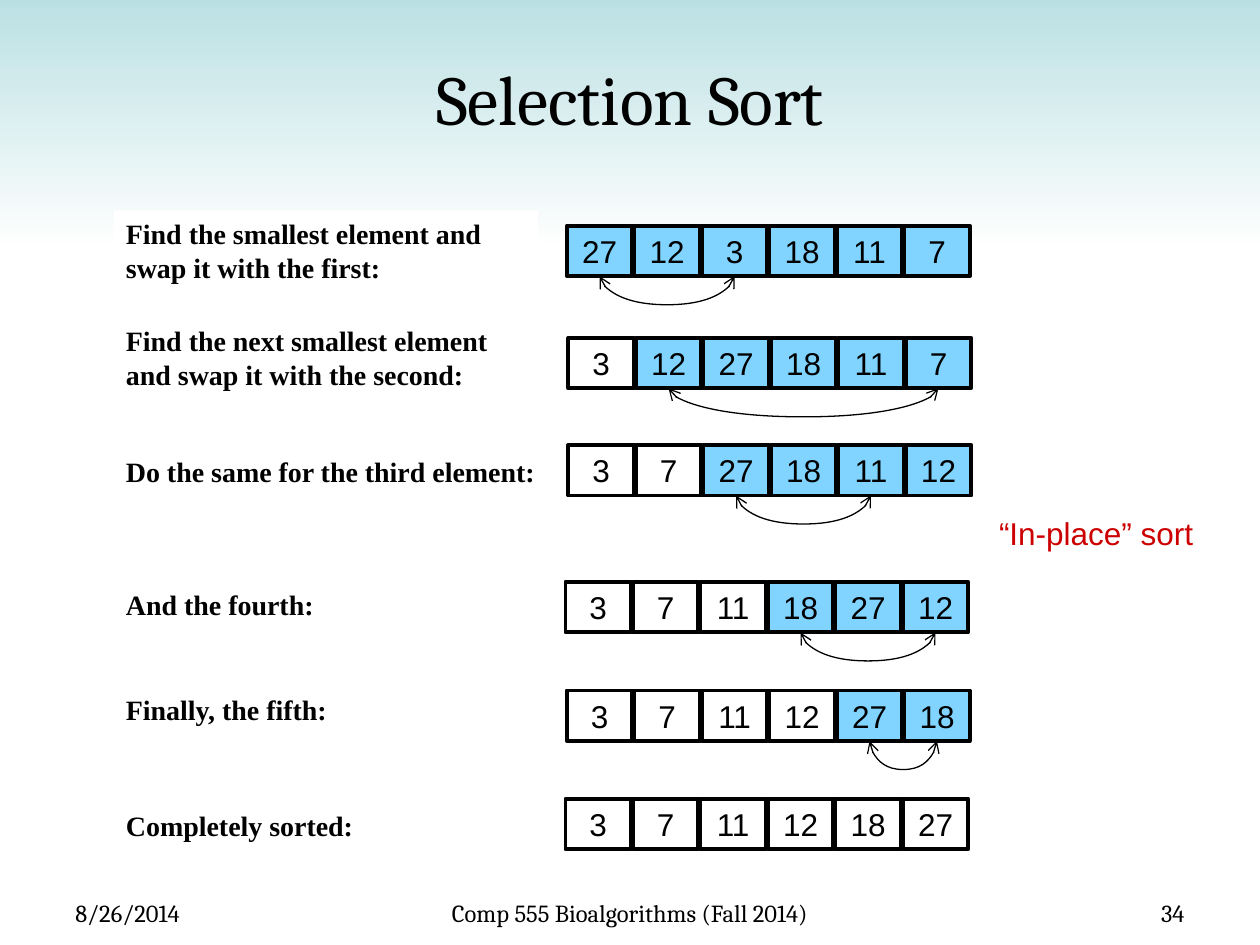
from typing import NamedTuple, Optional

import pptx
import pptx.dml.color
import pptx.enum.shapes
import pptx.enum.text
import pptx.oxml
import pptx.oxml.ns
import pptx.util

Cm = pptx.util.Cm
Pt = pptx.util.Pt
RGBColor = pptx.dml.color.RGBColor
Align = pptx.enum.text.PP_ALIGN
Anchor = pptx.enum.text.MSO_ANCHOR
RECT = pptx.enum.shapes.MSO_SHAPE.RECTANGLE
CURVE = pptx.enum.shapes.MSO_CONNECTOR.CURVE
NS = pptx.oxml.ns.nsdecls("a")

BLACK = RGBColor(0x00, 0x00, 0x00)
WHITE = RGBColor(0xFF, 0xFF, 0xFF)
UNSORTED = RGBColor(0x80, 0xD4, 0xFF)
RED = RGBColor(0xCC, 0x00, 0x00)
BAND_TOP = RGBColor(0xBB, 0xE0, 0xE3)
BAND_BOTTOM = RGBColor(0xFD, 0xFE, 0xFE)

CELL_W, CELL_H, PITCH = 1.32, 1.02, 1.36
ARC_DEPTH = 0.64
ARC_BASE = pptx.util.Emu(1600)  # the arc's own thickness, multiplied by its adjustment

TITLE = {"name": "Cambria", "size": Pt(40), "color": BLACK}
LABEL = {"name": "Times New Roman", "size": Pt(16), "bold": True, "color": BLACK}
NUMBER = {"name": "Arial", "size": Pt(18), "color": BLACK}
REMARK = {"name": "Arial", "size": Pt(18), "color": RED}
FOOTER = {"name": "Cambria", "size": Pt(14), "color": BLACK}


class Step(NamedTuple):
    label: str
    label_top: float
    label_width: float
    left: float
    top: float
    values: tuple[int, ...]
    swap: Optional[tuple[int, int]] = None


class Note(NamedTuple):
    text: str
    box: tuple[float, float, float, float]
    font: dict
    align: Align = Align.LEFT


STEPS = [
    Step("Find the smallest element and\nswap it with the first:", 4.24, 8.56,
         11.43, 4.55, (27, 12, 3, 18, 11, 7), (0, 2)),
    Step("Find the next smallest element\nand swap it with the second:", 6.4, 8.59,
         11.46, 6.81, (3, 12, 27, 18, 11, 7), (1, 5)),
    Step("Do the same for the third element:", 9.04, 9.04,
         11.46, 8.97, (3, 7, 27, 18, 11, 12), (2, 4)),
    Step("And the fourth:", 11.71, 4.4,
         11.4, 11.73, (3, 7, 11, 18, 27, 12), (3, 5)),
    Step("Finally, the fifth:", 13.84, 4.7,
         11.43, 13.92, (3, 7, 11, 12, 27, 18), (4, 5)),
    Step("Completely sorted:", 16.18, 5.2,
         11.4, 16.1, (3, 7, 11, 12, 18, 27)),
]

NOTES = [
    Note("“In-place” sort", (19.89, 10.24, 4.6, 1.02), REMARK),
    Note("8/26/2014", (1.27, 17.98, 5.92, 0.69), FOOTER),
    Note("Comp 555 Bioalgorithms (Fall 2014)", (7.52, 17.98, 10.36, 0.69), FOOTER, Align.CENTER),
    Note("34", (18.21, 17.98, 5.92, 0.69), FOOTER, Align.RIGHT),
]


def write(sp, text: str, font: dict, align: Align, anchor: Anchor) -> None:
    tf = sp.text_frame
    tf.word_wrap = True
    tf.vertical_anchor = anchor
    tf.text = text
    for p in tf.paragraphs:
        p.alignment = align
        for r in p.runs:
            for name, value in font.items():
                if name == "color":
                    r.font.color.rgb = value
                else:
                    setattr(r.font, name, value)


def add_rect(slide, left: float, top: float, width: float, height: float):
    sp = slide.shapes.add_shape(RECT, Cm(left), Cm(top), Cm(width), Cm(height))
    sp.shadow.inherit = False
    return sp


def add_band(slide) -> None:
    """Put the fading colour band behind everything else."""
    sp = add_rect(slide, 0, 0, 25.4, 4.88)
    sp.line.fill.background()
    sp.fill.gradient()
    sp.fill.gradient_angle = 270
    for stop, color, position in zip(sp.fill.gradient_stops, (BAND_TOP, BAND_BOTTOM), (0, 1)):
        stop.color.rgb = color
        stop.position = position
    slide.shapes.element.insert(2, sp.element)


def add_cell(slide, step: Step, i: int):
    sp = add_rect(slide, step.left + i * PITCH, step.top, CELL_W, CELL_H)
    sp.fill.solid()
    sp.fill.fore_color.rgb = UNSORTED if step.swap and i >= step.swap[0] else WHITE
    sp.line.color.rgb = BLACK
    sp.line.width = Pt(2.25)
    tf = sp.text_frame
    for side in ("left", "right", "top", "bottom"):
        setattr(tf, f"margin_{side}", 0)
    write(sp, str(step.values[i]), NUMBER, Align.CENTER, Anchor.MIDDLE)
    return sp


def add_swap_arc(slide, first, last) -> None:
    """Join the bottoms of two cells by a curve that hangs below them."""
    span = last.left - first.left
    middle = first.left + (span + first.width) // 2
    bottom = first.top + first.height
    arc = slide.shapes.add_connector(CURVE, 0, 0, 0, 0)
    arc.begin_connect(first, 2)
    arc.end_connect(last, 2)
    arc.left, arc.top = middle - ARC_BASE // 2, bottom - span // 2
    arc.width, arc.height = ARC_BASE, span
    arc.line.color.rgb = BLACK
    arc.line.width = Pt(0.75)

    sp_pr = arc.element.spPr
    xfrm = sp_pr.find(pptx.oxml.ns.qn("a:xfrm"))
    xfrm.set("rot", "16200000")
    xfrm.set("flipH", "1")
    guides = sp_pr.find(pptx.oxml.ns.qn("a:prstGeom")).get_or_add_avLst()
    ratio = round(Cm(ARC_DEPTH) / ARC_BASE * 100000)
    guides.append(pptx.oxml.parse_xml(f'<a:gd {NS} name="adj1" fmla="val {ratio}"/>'))
    line = sp_pr.find(pptx.oxml.ns.qn("a:ln"))
    for end in ("headEnd", "tailEnd"):
        line.append(pptx.oxml.parse_xml(f'<a:{end} {NS} type="arrow"/>'))
    sp_pr.append(pptx.oxml.parse_xml(f"<a:effectLst {NS}/>"))


def add_step(slide, step: Step) -> None:
    height = 1.63 if "\n" in step.label else 0.94
    label = add_rect(slide, 2.29, step.label_top, step.label_width, height)
    label.fill.solid()
    label.fill.fore_color.rgb = WHITE
    label.line.fill.background()
    write(label, step.label, LABEL, Align.LEFT, Anchor.TOP)
    cells = [add_cell(slide, step, i) for i in range(len(step.values))]
    if step.swap:
        first, last = step.swap
        add_swap_arc(slide, cells[first], cells[last])


def add_note(slide, note: Note) -> None:
    sp = slide.shapes.add_textbox(*map(Cm, note.box))
    write(sp, note.text, note.font, note.align, Anchor.TOP)


def main() -> None:
    prs = pptx.Presentation()
    prs.slide_width, prs.slide_height = Cm(25.4), Cm(19.05)
    slide = prs.slides.add_slide(prs.slide_layouts[5])
    add_band(slide)
    title = slide.shapes.title
    title.left, title.top, title.width, title.height = map(Cm, (1.27, 0.76, 22.86, 2.41))
    write(title, "Selection Sort", TITLE, Align.CENTER, Anchor.MIDDLE)
    for step in STEPS:
        add_step(slide, step)
    for note in NOTES:
        add_note(slide, note)
    prs.save("out.pptx")


if __name__ == "__main__":
    main()
